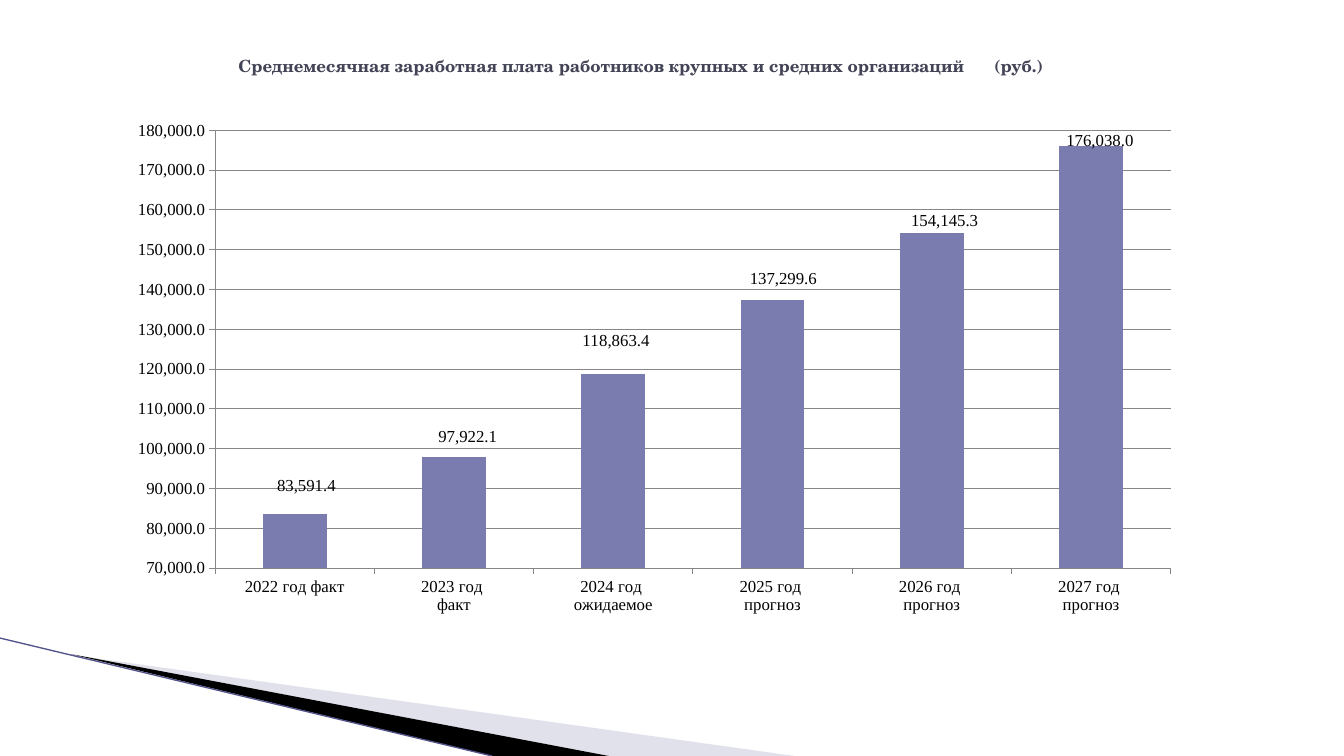
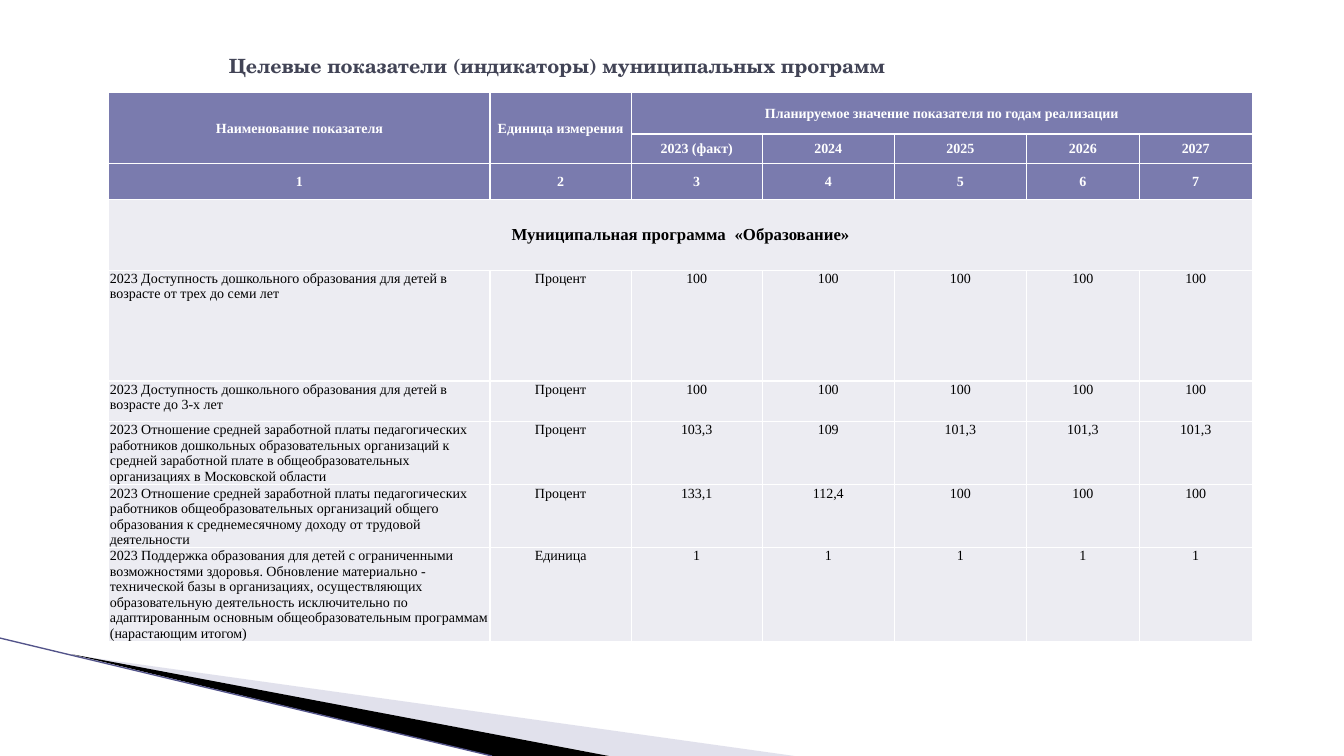
from dataclasses import dataclass
from lxml import etree
from pptx import Presentation
from pptx.chart.data import CategoryChartData
from pptx.dml.color import RGBColor
from pptx.enum.chart import XL_CHART_TYPE, XL_LABEL_POSITION, XL_TICK_MARK
from pptx.enum.shapes import MSO_CONNECTOR
from pptx.enum.text import MSO_ANCHOR, MSO_AUTO_SIZE, PP_ALIGN
from pptx.oxml import parse_xml
from pptx.oxml.ns import nsdecls, qn
from pptx.util import Inches, Pt


@dataclass(frozen=True)
class Theme:
    ink: str = "424456"
    main: str = "7A7BAE"
    pale: str = "ECECF2"
    wedge: str = "B6B6D1"
    edge: str = "53548A"
    grid: str = "868686"
    black: str = "000000"
    white: str = "FFFFFF"
    head: str = "TeX Gyre Schola"
    body: str = "Times New Roman"
    small: int = 10
    text: int = 12
    large: int = 14


T = Theme()

# Content: a number inside a text list is a gap, one space widened by that many points
PAY_TITLE = ["Среднемесячная заработная плата работников крупных и средних организаций",
             17, "(руб.)"]
PAY = [  # category, value, centre of its label on the slide
    ("2022 год факт", 83591.4, (3.04, 4.82)),
    ("2023 год \nфакт", 97922.1, (4.64, 4.33)),
    ("2024 год \nожидаемое", 118863.4, (6.11, 3.38)),
    ("2025 год \nпрогноз", 137299.6, (7.77, 2.77)),
    ("2026 год \nпрогноз", 154145.3, (9.37, 2.19)),
    ("2027 год \nпрогноз", 176038, (10.91, 1.4)),
]
LOW, HIGH, STEP = 70000, 180000, 10000
BOX = (0.84, 0.96, 10.87, 5.47)
PLOT = (0.119, 0.061, 0.872, 0.794)
FORMAT = "#,##0.0"

GOAL_TITLE = ["Целевые показатели (индикаторы) муниципальных программ"]
COLS = [3.78, 1.4, 1.3, 1.31, 1.31, 1.12, 1.12]
ROWS = [0.41, 0.29, 0.36, 0.7, 1.1, 0.4, 0.63, 0.62, 0.93]
HEADS = [
    ["Наименование показателя", "Единица измерения",
     "Планируемое значение показателя по годам реализации", "", "", "", ""],
    ["", "", "2023 (факт)", "2024", "2025", "2026", "2027"],
    [str(n) for n in range(1, 8)],
]
GROUP = ["Муниципальная программа", 3, "«Образование»"]
GOALS = [
    ["2023 Доступность дошкольного образования для детей в возрасте от трех до семи лет",
     "Процент"] + ["100"] * 5,
    ["2023 Доступность дошкольного образования для детей в возрасте до 3-х лет",
     "Процент"] + ["100"] * 5,
    ["2023 Отношение средней заработной платы педагогических работников дошкольных "
     "образовательных организаций к средней заработной плате в общеобразовательных "
     "организациях в Московской области",
     "Процент", "103,3", "109", "101,3", "101,3", "101,3"],
    ["2023 Отношение средней заработной платы педагогических работников "
     "общеобразовательных организаций общего образования к среднемесячному доходу "
     "от трудовой деятельности",
     "Процент", "133,1", "112,4", "100", "100", "100"],
    ["2023 Поддержка образования для детей с ограниченными возможностями здоровья. "
     "Обновление материально - технической базы в организациях, осуществляющих "
     "образовательную деятельность исключительно по адаптированным основным "
     "общеобразовательным программам (нарастающим итогом)",
     "Единица"] + ["1"] * 5,
]
MERGES = [((0, 0), (1, 0)), ((0, 1), (1, 1)), ((0, 2), (0, 6)), ((3, 0), (3, 6))]

# Corner wedges: points, colour, opacity in percent
WEDGES = [
    ([(0.73, 6.5), (7.88, 7.5), (6.04, 7.5)], T.wedge, 40),
    ([(0.71, 6.49), (6.04, 7.5), (4.88, 7.5)], T.black, 100),
]


def rgb(code):
    return RGBColor.from_string(code)


def paint(item, code):
    item.fill.solid()
    item.fill.fore_color.rgb = rgb(code)


def style(font, face, size, code, bold=False):
    font.name, font.size, font.bold = face, Pt(size), bold
    font.color.rgb = rgb(code)


def write(para, parts, *look):
    for part in parts:
        run = para.add_run()
        run.text = part if isinstance(part, str) else " "
        style(run.font, *look)
        if not isinstance(part, str):
            run.font._element.set("spc", str(part * 100))


# Shared parts
def corner(slide, layout):
    """Draw the wedges and the edge line, then move them to the layout."""
    parts = []
    for points, code, alpha in WEDGES:
        pen = slide.shapes.build_freeform(*map(Inches, points[0]))
        pen.add_line_segments([tuple(map(Inches, p)) for p in points[1:]], close=True)
        wedge = pen.convert_to_shape()
        wedge.shadow.inherit = False
        paint(wedge, code)
        wedge.line.fill.background()
        if alpha < 100:
            clr = wedge._element.spPr.find(".//" + qn("a:srgbClr"))
            etree.SubElement(clr, qn("a:alpha")).set("val", str(alpha * 1000))
        parts.append(wedge)
    ends = map(Inches, (0, 6.33, 4.88, 7.5))
    edge = slide.shapes.add_connector(MSO_CONNECTOR.STRAIGHT, *ends)
    edge.line.color.rgb, edge.line.width = rgb(T.edge), Pt(0.95)
    etree.SubElement(edge._element.spPr, qn("a:effectLst"))
    parts.append(edge)
    for spot, part in enumerate(parts, 2):
        layout.shapes.element.insert(spot, part._element)


def head(slide, parts, box, size, align):
    title = slide.shapes.title
    title.left, title.top, title.width, title.height = map(Inches, box)
    frame = title.text_frame
    frame.word_wrap, frame.auto_size = True, MSO_AUTO_SIZE.NONE
    frame.vertical_anchor = MSO_ANCHOR.MIDDLE
    para = frame.paragraphs[0]
    para.alignment = align
    write(para, parts, T.head, size, T.ink, True)


# Chart
def place(x, y, w=None, h=None):
    """Manual layout; with a size it frames the inner plot area."""
    tags = [("x", x), ("y", y)]
    if w:
        tags = [("layoutTarget", "inner"), ("xMode", "edge"), ("yMode", "edge"),
                *tags, ("w", w), ("h", h)]
    body = "".join(f'<c:{tag} val="{val}"/>' for tag, val in tags)
    return parse_xml(f'<c:layout {nsdecls("c")}><c:manualLayout>{body}'
                     "</c:manualLayout></c:layout>")


def shift(num, val, spot):
    """Offset of a label from the middle of its column, as parts of the chart."""
    left, top, wide, high = BOX
    px, py, pw, ph = PLOT
    midx = px + pw * (num + 0.5) / len(PAY)
    midy = py + ph * (1 - (val - LOW) / (HIGH - LOW) / 2)
    return round((spot[0] - left) / wide - midx, 4), round((spot[1] - top) / high - midy, 4)


def draw(slide):
    data = CategoryChartData(number_format=FORMAT)
    data.categories = [name for name, _, _ in PAY]
    data.add_series("Series 1", [val for _, val, _ in PAY])
    chart = slide.shapes.add_chart(XL_CHART_TYPE.COLUMN_STACKED,
                                   *map(Inches, BOX), data).chart
    chart.has_legend = chart.has_title = False
    style(chart.font, T.body, T.text, T.black)

    axis = chart.value_axis
    axis.minimum_scale, axis.maximum_scale, axis.major_unit = LOW, HIGH, STEP
    axis.tick_labels.number_format = FORMAT
    axis.tick_labels.number_format_is_linked = False
    axis.major_gridlines.format.line.color.rgb = rgb(T.grid)
    for item in (axis, chart.category_axis):
        item.major_tick_mark = XL_TICK_MARK.OUTSIDE
        item.format.line.color.rgb = rgb(T.grid)
        style(item.tick_labels.font, T.body, T.text, T.black)

    plot = chart.plots[0]
    plot.gap_width, plot.overlap, plot.vary_by_categories = 150, 100, False
    bars = plot.series[0]
    paint(bars.format, T.main)
    tags = bars.data_labels
    tags.show_value, tags.number_format = True, FORMAT
    tags.number_format_is_linked = False
    style(tags.font, T.body, T.text, T.black)
    for num in range(len(PAY)):
        tag = bars.points[num].data_label
        style(tag.font, T.body, T.text, T.black)
        tag.position = XL_LABEL_POSITION.CENTER
    for num, (node, (_, val, spot)) in enumerate(
            zip(tags._element.findall(qn("c:dLbl")), PAY)):
        node.insert(1, place(*shift(num, val, spot)))
    # Moved labels stand alone, without leader lines
    lead = tags._element.find(qn("c:showLeaderLines"))
    if lead is None:
        lead = etree.SubElement(tags._element, qn("c:showLeaderLines"))
    lead.set("val", "0")

    area = chart._chartSpace.find(".//" + qn("c:plotArea"))
    for old in area.findall(qn("c:layout")):
        area.remove(old)
    area.insert(0, place(*PLOT))


# Table
def border(cell):
    props = cell._tc.get_or_add_tcPr()
    for spot, side in enumerate(("lnL", "lnR", "lnT", "lnB")):
        props.insert(spot, parse_xml(
            f'<a:{side} {nsdecls("a")} w="{Pt(1)}"><a:solidFill>'
            f'<a:srgbClr val="{T.white}"/></a:solidFill></a:{side}>'))


def fill(slide):
    grid = HEADS + [[GROUP] + [""] * 6] + GOALS
    table = slide.shapes.add_table(len(ROWS), len(COLS), Inches(1.08), Inches(0.92),
                                   Inches(sum(COLS)), Inches(sum(ROWS))).table
    for col, wide in zip(table.columns, COLS):
        col.width = Inches(wide)
    for row, high in zip(table.rows, ROWS):
        row.height = Inches(high)
    top = len(HEADS)
    for r, line in enumerate(grid):
        for c, text in enumerate(line):
            cell = table.cell(r, c)
            cell.margin_left = cell.margin_right = cell.margin_top = Inches(0.01)
            cell.margin_bottom = 0
            cell.vertical_anchor = MSO_ANCHOR.MIDDLE if r <= top else MSO_ANCHOR.TOP
            paint(cell, T.main if r < top else T.pale)
            border(cell)
            para = cell.text_frame.paragraphs[0]
            para.alignment = PP_ALIGN.LEFT if r > top and c == 0 else PP_ALIGN.CENTER
            if text:
                write(para, [text] if isinstance(text, str) else text, T.body,
                      T.text if r == top else T.small,
                      T.white if r < top else T.black, r <= top)
    for start, end in MERGES:
        table.cell(*start).merge(table.cell(*end))


def main():
    deck = Presentation()
    deck.slide_width, deck.slide_height = Inches(13.33), Inches(7.5)
    layout = deck.slide_layouts[5]

    pay = deck.slides.add_slide(layout)
    corner(pay, layout)
    draw(pay)
    head(pay, PAY_TITLE, (1.63, 0.36, 9.45, 0.58), T.text, PP_ALIGN.CENTER)

    goals = deck.slides.add_slide(layout)
    head(goals, GOAL_TITLE, (2.17, 0.31, 9, 0.69), T.large, PP_ALIGN.LEFT)
    fill(goals)
    deck.save("out.pptx")


if __name__ == "__main__":
    main()
